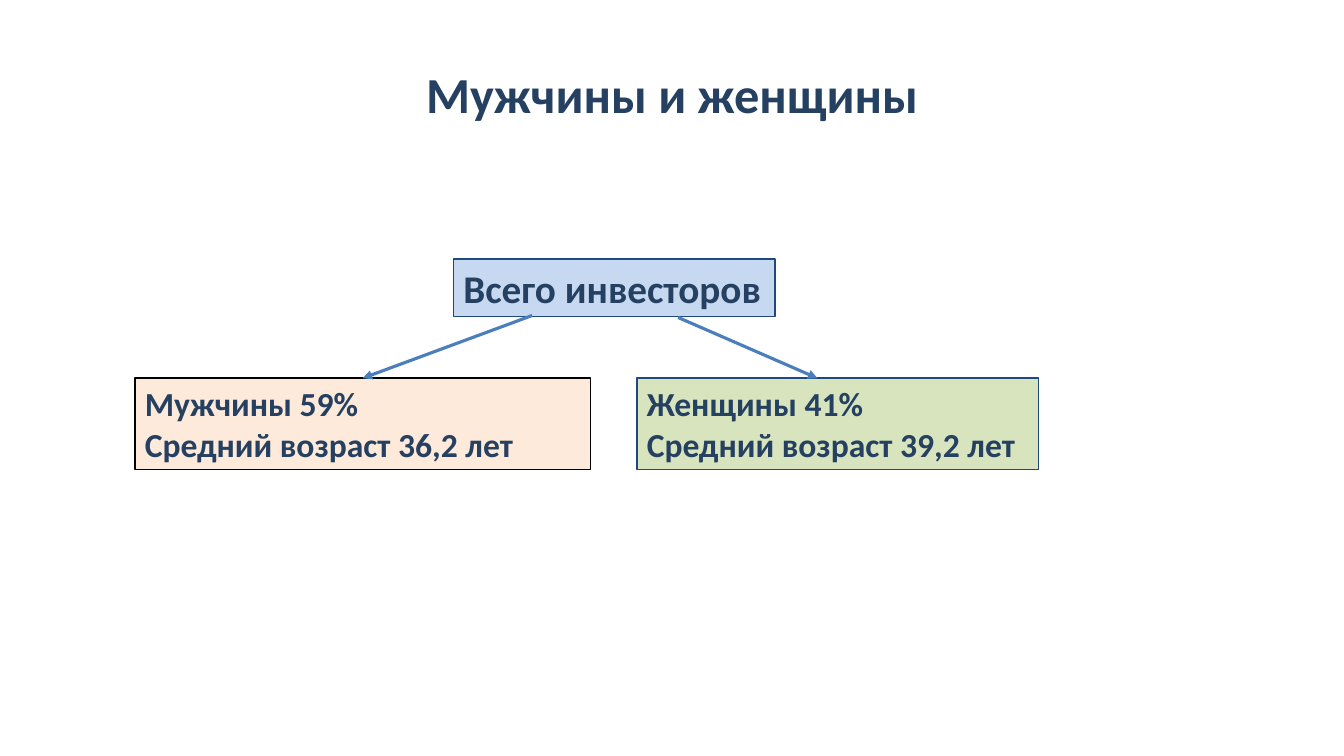
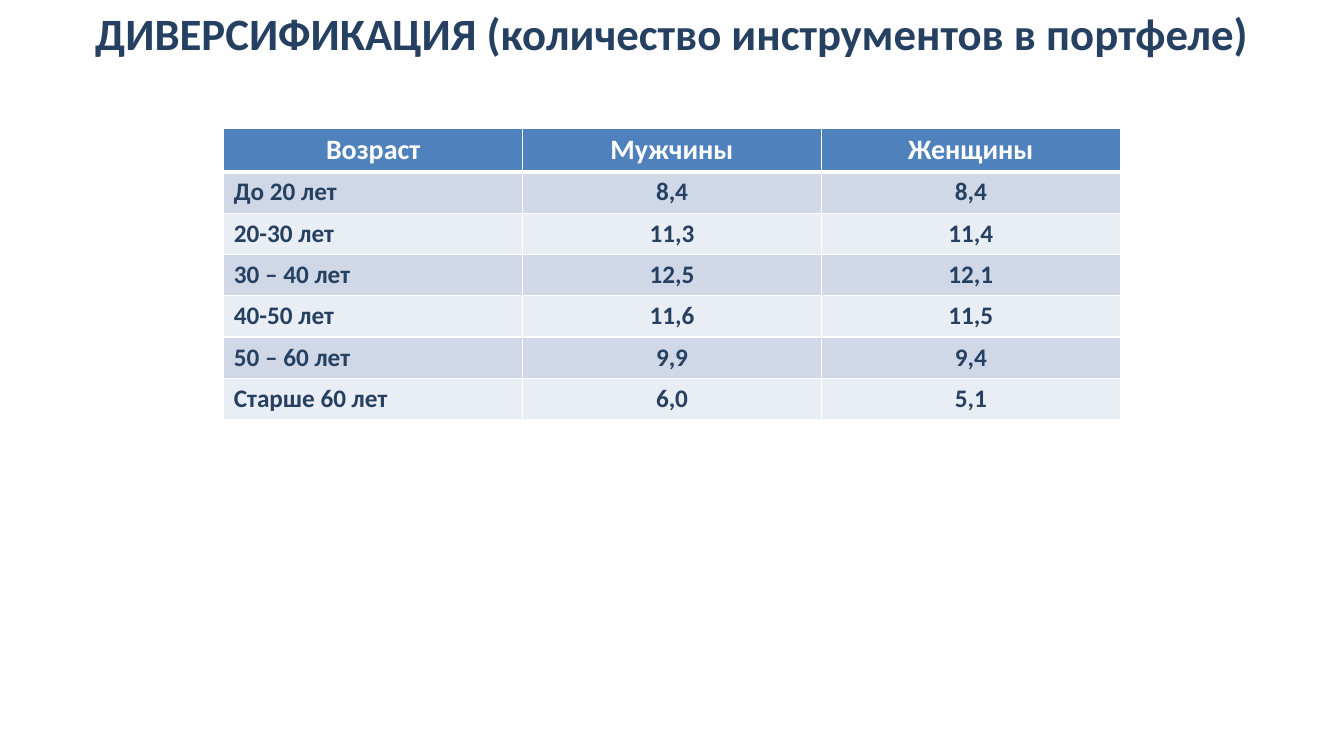
from dataclasses import dataclass

from lxml import etree
from pptx import Presentation
from pptx import util as u
from pptx.dml.color import RGBColor
from pptx.enum import shapes, text
from pptx.oxml import ns


@dataclass(frozen=True)
class Theme:
    font: str = "Calibri"
    ink: str = "254061"
    white: str = "FFFFFF"
    black: str = "000000"
    outline: str = "1F497D"
    arrow: str = "4B7EBC"
    total_fill: str = "C6D9F1"
    men_fill: str = "FDEADA"
    women_fill: str = "D7E4BD"
    header_fill: str = "4F81BD"
    bands: tuple[str, str] = ("D0D8E8", "E9EDF4")
    title_size: int = 36
    long_title_size: int = 32
    total_size: int = 28
    group_size: int = 24
    header_size: int = 20
    body_size: int = 18
    outline_width: float = 1
    arrow_width: float = 2.25
    border_width: float = 1
    header_border_width: float = 3


THEME = Theme()
SLIDE_WIDTH, SLIDE_HEIGHT = 33.87, 19.05
TITLE_LEFT, TITLE_WIDTH = 1.7, 30.48


@dataclass(frozen=True)
class Box:
    label: str
    left: float
    top: float
    width: float
    height: float
    fill: str
    outline: str
    size: int
    wrap: bool = True


@dataclass(frozen=True)
class Arrow:
    start: tuple[float, float]
    end: tuple[float, float]


TOTAL = Box("Всего инвесторов", 11.43, 6.53, 8.1, 1.45,
            THEME.total_fill, THEME.outline, THEME.total_size, wrap=False)
MEN = Box("Мужчины 59%\nСредний возраст 36,2 лет", 3.4, 9.53, 11.48, 2.31,
          THEME.men_fill, THEME.black, THEME.group_size)
WOMEN = Box("Женщины 41%\nСредний возраст 39,2 лет", 16.05, 9.53, 10.13, 2.31,
            THEME.women_fill, THEME.outline, THEME.group_size)
TO_MEN = Arrow((13.41, 7.95), (9.14, 9.53))
TO_WOMEN = Arrow((17.09, 8), (20.6, 9.53))

INSTRUMENTS = (
    ("Возраст", "Мужчины", "Женщины"),
    ("До 20 лет", "8,4", "8,4"),
    ("20-30 лет", "11,3", "11,4"),
    ("30 – 40 лет", "12,5", "12,1"),
    ("40-50 лет", "11,6", "11,5"),
    ("50 – 60 лет", "9,9", "9,4"),
    ("Старше 60 лет", "6,0", "5,1"),
)
TABLE_LEFT, TABLE_TOP = 5.64, 3.23
COLUMN_WIDTH, ROW_HEIGHT = 7.53, 1.04


def rgb(value: str) -> RGBColor:
    return RGBColor.from_string(value)


def format_text(frame, size: int, color: str, centered: bool) -> None:
    for paragraph in frame.paragraphs:
        paragraph.alignment = text.PP_ALIGN.CENTER if centered else text.PP_ALIGN.LEFT
        for run in paragraph.runs:
            run.font.name = THEME.font
            run.font.size = u.Pt(size)
            run.font.bold = True
            run.font.color.rgb = rgb(color)


def add_title(slide, wording: str, top: float, height: float, size: int) -> None:
    title = slide.shapes.add_textbox(
        u.Cm(TITLE_LEFT), u.Cm(top), u.Cm(TITLE_WIDTH), u.Cm(height))
    frame = title.text_frame
    frame.word_wrap = True
    frame.vertical_anchor = text.MSO_ANCHOR.MIDDLE
    frame.text = wording
    format_text(frame, size, THEME.ink, centered=True)


def add_box(slide, box: Box):
    shape = slide.shapes.add_shape(
        shapes.MSO_SHAPE.RECTANGLE,
        u.Cm(box.left), u.Cm(box.top), u.Cm(box.width), u.Cm(box.height))
    shape.shadow.inherit = False
    shape.fill.solid()
    shape.fill.fore_color.rgb = rgb(box.fill)
    shape.line.color.rgb = rgb(box.outline)
    shape.line.width = u.Pt(THEME.outline_width)
    frame = shape.text_frame
    frame.word_wrap = box.wrap
    frame.auto_size = text.MSO_AUTO_SIZE.SHAPE_TO_FIT_TEXT
    frame.vertical_anchor = text.MSO_ANCHOR.TOP
    frame.text = box.label
    format_text(frame, box.size, THEME.ink, centered=False)
    return shape


def add_arrow(slide, arrow: Arrow):
    connector = slide.shapes.add_connector(
        shapes.MSO_CONNECTOR.STRAIGHT,
        *(u.Cm(value) for value in arrow.start + arrow.end))
    connector.line.color.rgb = rgb(THEME.arrow)
    connector.line.width = u.Pt(THEME.arrow_width)
    etree.SubElement(connector.line._get_or_add_ln(), ns.qn("a:tailEnd"), type="triangle")
    etree.SubElement(connector._element.spPr, ns.qn("a:effectLst"))
    return connector


def add_borders(cell, top: float, bottom: float) -> None:
    side = THEME.border_width
    properties = cell._tc.get_or_add_tcPr()
    for tag, width in (("lnL", side), ("lnR", side), ("lnT", top), ("lnB", bottom)):
        border = etree.SubElement(properties, ns.qn(f"a:{tag}"), w=str(u.Pt(width)))
        fill = etree.SubElement(border, ns.qn("a:solidFill"))
        etree.SubElement(fill, ns.qn("a:srgbClr"), val=THEME.white)


def add_instrument_table(slide, rows: tuple[tuple[str, ...], ...]) -> None:
    row_count, column_count = len(rows), len(rows[0])
    table = slide.shapes.add_table(
        row_count, column_count, u.Cm(TABLE_LEFT), u.Cm(TABLE_TOP),
        u.Cm(COLUMN_WIDTH * column_count), u.Cm(ROW_HEIGHT * row_count)).table
    for row_index, values in enumerate(rows):
        is_header = row_index == 0
        fill = THEME.header_fill if is_header else THEME.bands[(row_index - 1) % 2]
        color = THEME.white if is_header else THEME.ink
        size = THEME.header_size if is_header else THEME.body_size
        top = THEME.header_border_width if row_index == 1 else THEME.border_width
        bottom = THEME.header_border_width if is_header else THEME.border_width
        for column_index, value in enumerate(values):
            cell = table.cell(row_index, column_index)
            cell.text_frame.text = value
            format_text(cell.text_frame, size, color, is_header or column_index > 0)
            add_borders(cell, top, bottom)
            cell.fill.solid()
            cell.fill.fore_color.rgb = rgb(fill)


def build_investors(slide) -> None:
    add_title(slide, "Мужчины и женщины", 0.76, 3.18, THEME.title_size)
    add_box(slide, TOTAL)
    men = add_box(slide, MEN)
    add_box(slide, WOMEN)
    add_arrow(slide, TO_MEN).end_connect(men, 0)
    add_arrow(slide, TO_WOMEN)


def build_diversification(slide) -> None:
    add_title(slide, "ДИВЕРСИФИКАЦИЯ (количество инструментов в портфеле)",
              0, 1.65, THEME.long_title_size)
    add_instrument_table(slide, INSTRUMENTS)


def main() -> None:
    presentation = Presentation()
    presentation.slide_width = u.Cm(SLIDE_WIDTH)
    presentation.slide_height = u.Cm(SLIDE_HEIGHT)
    blank = presentation.slide_layouts[6]
    for build in (build_investors, build_diversification):
        build(presentation.slides.add_slide(blank))
    presentation.save("out.pptx")


if __name__ == "__main__":
    main()
